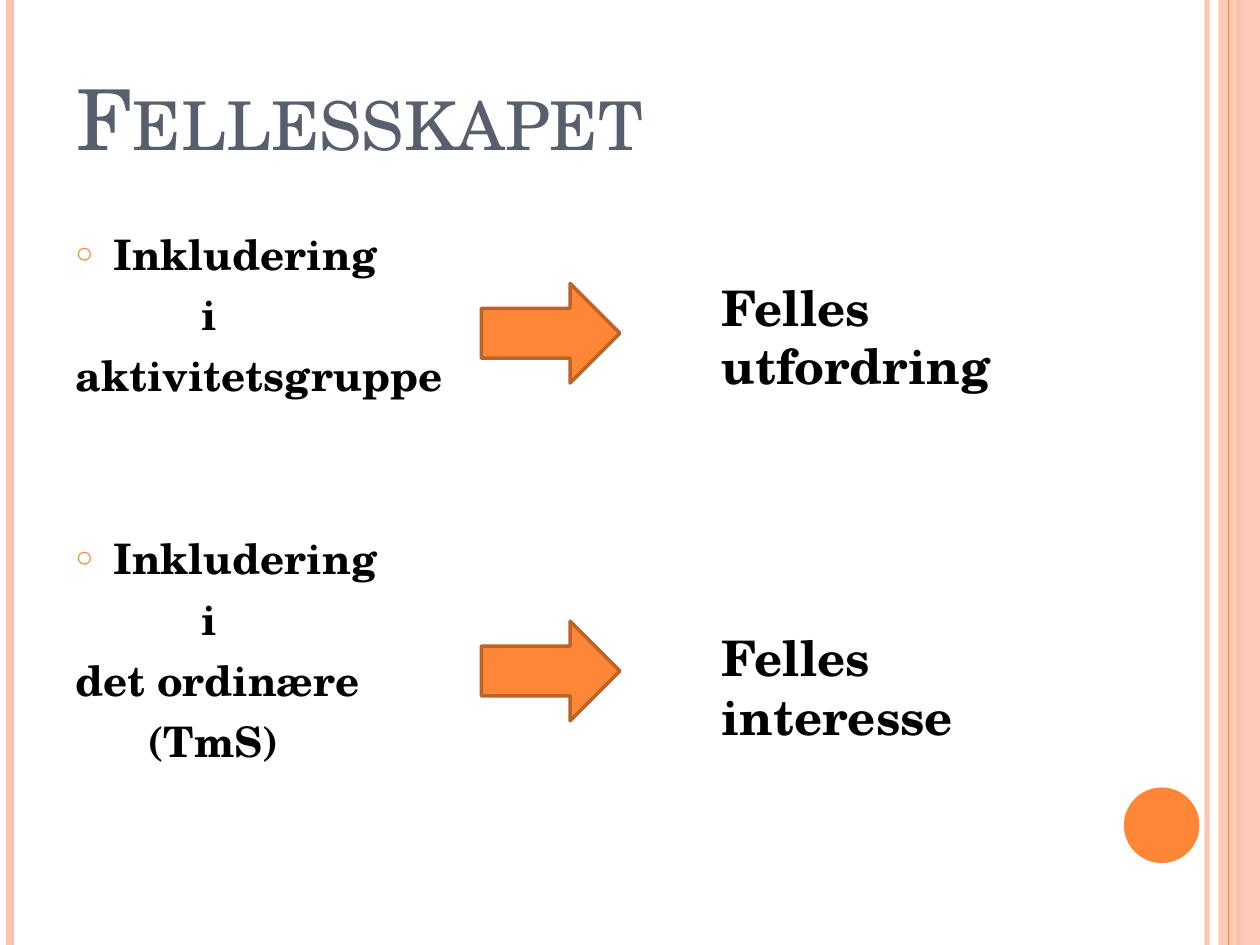
from dataclasses import dataclass
from typing import Optional

from lxml.etree import SubElement
from pptx import Presentation
from pptx.dml.color import RGBColor
from pptx.enum.shapes import MSO_CONNECTOR as Connector, MSO_SHAPE as Shape
from pptx.enum.text import MSO_ANCHOR as Anchor, MSO_AUTO_SIZE as AutoSize, PP_ALIGN as Align
from pptx.oxml.ns import qn
from pptx.util import Inches, Pt


@dataclass(frozen=True)
class Theme:
    font: str = "TeX Gyre Schola"
    accent: str = "FE8637"
    accent_dark: str = "BC6329"
    pale: str = "FEC3AE"
    heading: str = "575F6D"
    text: str = "000000"
    title_size: float = 48
    body_size: float = 24
    result_size: float = 28


@dataclass(frozen=True)
class Stripe:
    x: float
    color: str
    width: float
    opacity: int = 100


@dataclass(frozen=True)
class BodyLine:
    text: str
    indent: float = 0
    bullet: bool = False
    space_before: float = 6


@dataclass(frozen=True)
class Result:
    text: str
    arrow_top: float
    text_top: float
    text_width: float


THEME = Theme()
SLIDE_WIDTH, SLIDE_HEIGHT = 10, 7.5
GROUP_GAP = 75.6  # two empty line heights plus the usual spacing

STRIPES_BEHIND = [Stripe(9.58, THEME.pale, 3, 93), Stripe(0.08, THEME.pale, 4.5),
                  Stripe(9.83, THEME.accent, 1.5)]
STRIPE_IN_FRONT = Stripe(9.75, THEME.accent, 0.75)

BODY_LINES = [
    BodyLine("Inkludering", 0.3, bullet=True),
    BodyLine("i", 1),
    BodyLine("aktivitetsgruppe"),
    BodyLine("Inkludering", 0.3, bullet=True, space_before=GROUP_GAP),
    BodyLine("i", 1),
    BodyLine("det ordinære"),
    BodyLine("(TmS)", 0.57),
]

RESULTS = [Result("Felles utfordring", 2.25, 2.15, 3.07),
           Result("Felles interesse", 4.93, 4.93, 2.52)]


def color(value: str) -> RGBColor:
    return RGBColor.from_string(value)


def set_opacity(shape, percent: int) -> None:
    if percent < 100:
        rgb = next(shape._element.spPr.iter(qn("a:srgbClr")))
        SubElement(rgb, qn("a:alpha"), val=str(percent * 1000))


def format_frame(frame, **values) -> None:
    for name, value in {"word_wrap": True, "auto_size": AutoSize.NONE, **values}.items():
        setattr(frame, name, value)


def place(shape, left: float, top: float, width: float, height: float) -> None:
    box = {"left": left, "top": top, "width": width, "height": height}
    for name, value in box.items():
        setattr(shape, name, Inches(value))


def add_text(paragraph, text: str, size: float, rgb: str, bold: bool):
    run = paragraph.add_run()
    run.text = text
    values = {"name": THEME.font, "size": Pt(size), "bold": bold}
    for name, value in values.items():
        setattr(run.font, name, value)
    run.font.color.rgb = color(rgb)
    paragraph.alignment = Align.LEFT
    return run


def draw_stripe(slide, stripe: Stripe) -> None:
    x = Inches(stripe.x)
    line = slide.shapes.add_connector(Connector.STRAIGHT, x, 0, x, Inches(SLIDE_HEIGHT))
    line.line.color.rgb = color(stripe.color)
    line.line.width = Pt(stripe.width)
    set_opacity(line, stripe.opacity)
    SubElement(line._element.spPr, qn("a:effectLst"))


def draw_shape(slide, kind: Shape, box: tuple, fill: str,
               outline: Optional[str] = None, opacity: int = 100) -> None:
    shape = slide.shapes.add_shape(kind, *map(Inches, box))
    shape.shadow.inherit = False
    shape.fill.solid()
    shape.fill.fore_color.rgb = color(fill)
    set_opacity(shape, opacity)
    if outline:
        shape.line.color.rgb = color(outline)
        shape.line.width = Pt(2)
    else:
        shape.line.fill.background()


def write_body_line(paragraph, line: BodyLine) -> None:
    add_text(paragraph, line.text, THEME.body_size, THEME.text, True)
    paragraph.space_before = Pt(line.space_before)
    properties = paragraph._p.get_or_add_pPr()
    properties.set("marL", str(Inches(line.indent)))
    properties.set("indent", str(-Inches(line.indent) if line.bullet else 0))
    if line.bullet:
        bullet_color = SubElement(properties, qn("a:buClr"))
        SubElement(bullet_color, qn("a:srgbClr"), val=THEME.accent)
        SubElement(properties, qn("a:buSzPct"), val="70000")
        SubElement(properties, qn("a:buChar"), char="○")
    else:
        SubElement(properties, qn("a:buNone"))


def draw_result(slide, result: Result) -> None:
    draw_shape(slide, Shape.RIGHT_ARROW, (3.82, result.arrow_top, 1.1, 0.79),
               THEME.accent, THEME.accent_dark)
    box = (5.63, result.text_top, result.text_width, 1.04)
    frame = slide.shapes.add_textbox(*map(Inches, box)).text_frame
    format_frame(frame, auto_size=AutoSize.SHAPE_TO_FIT_TEXT)
    add_text(frame.paragraphs[0], result.text, THEME.result_size, THEME.text, True)


def main() -> None:
    presentation = Presentation()
    presentation.slide_width = Inches(SLIDE_WIDTH)
    presentation.slide_height = Inches(SLIDE_HEIGHT)
    slide = presentation.slides.add_slide(presentation.slide_layouts[1])
    title, body = slide.placeholders

    # Side decoration
    for stripe in STRIPES_BEHIND:
        draw_stripe(slide, stripe)
    draw_shape(slide, Shape.RECTANGLE, (9.67, 0, 0.33, SLIDE_HEIGHT), THEME.pale, opacity=87)
    draw_stripe(slide, STRIPE_IN_FRONT)
    draw_shape(slide, Shape.OVAL, (8.92, 6.25, 0.6, 0.6), THEME.accent)

    # Title
    place(title, 0.51, 0.36, 8.9, 1.02)
    format_frame(title.text_frame, vertical_anchor=Anchor.BOTTOM)
    heading = add_text(title.text_frame.paragraphs[0], "Fellesskapet",
                       THEME.title_size, THEME.heading, False)
    heading.font._element.set("cap", "small")

    # Inclusion list
    place(body, 0.5, 1.76, 3.16, 5.3)
    frame = body.text_frame
    format_frame(frame, vertical_anchor=Anchor.TOP)
    for index, line in enumerate(BODY_LINES):
        write_body_line(frame.add_paragraph() if index else frame.paragraphs[0], line)

    # Arrows and what they lead to
    for result in RESULTS:
        draw_result(slide, result)

    presentation.save("out.pptx")


if __name__ == "__main__":
    main()
